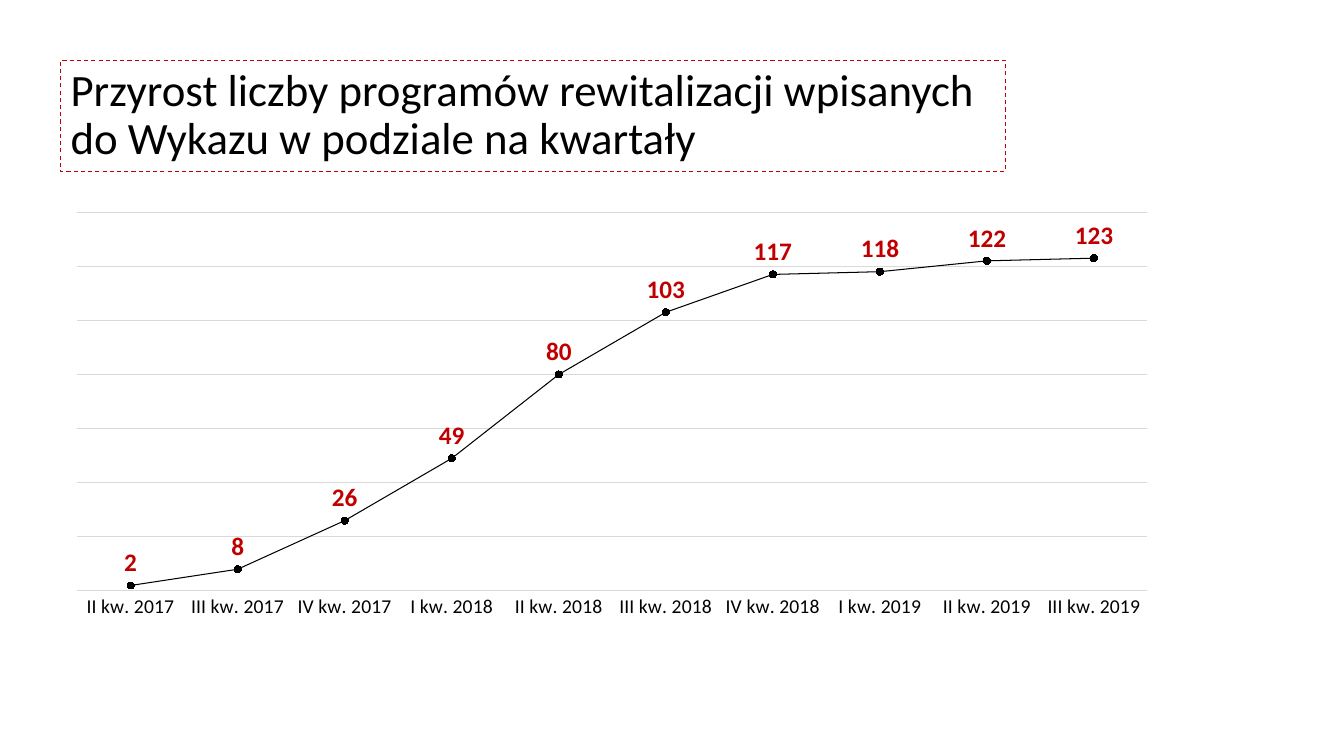
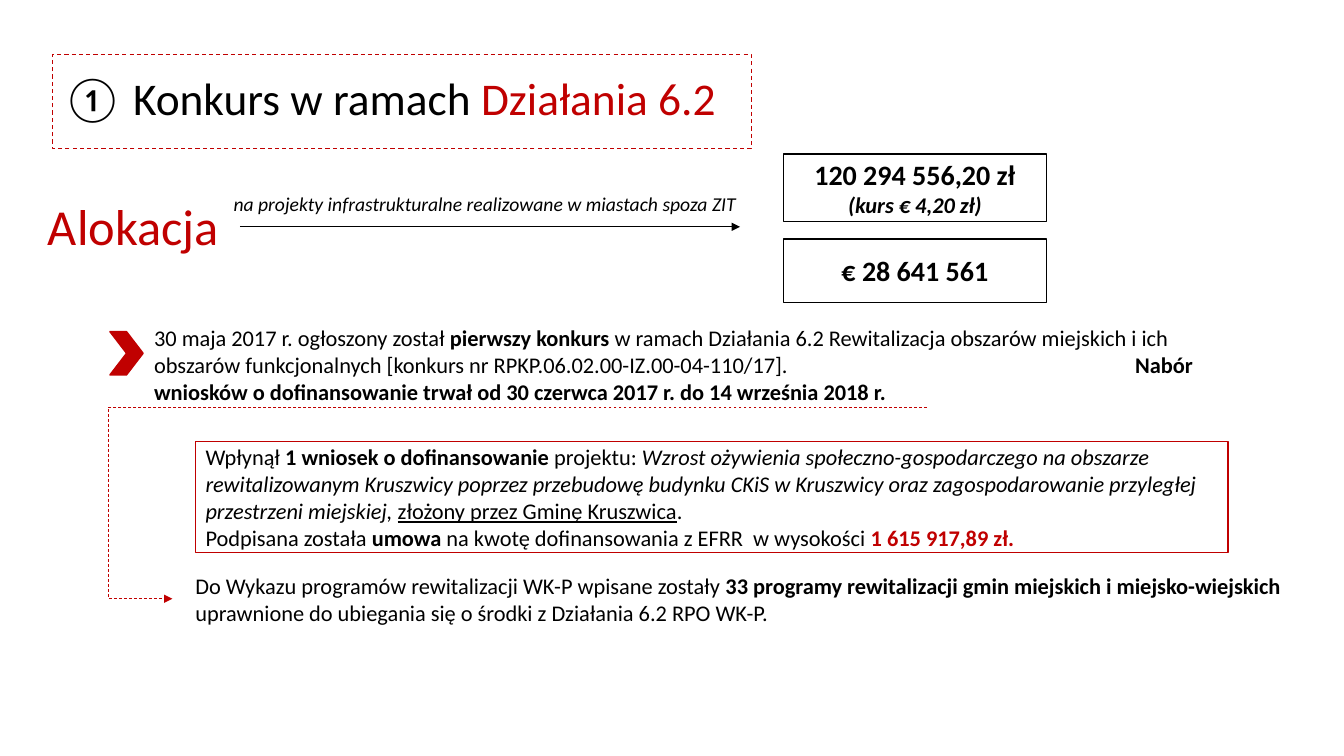
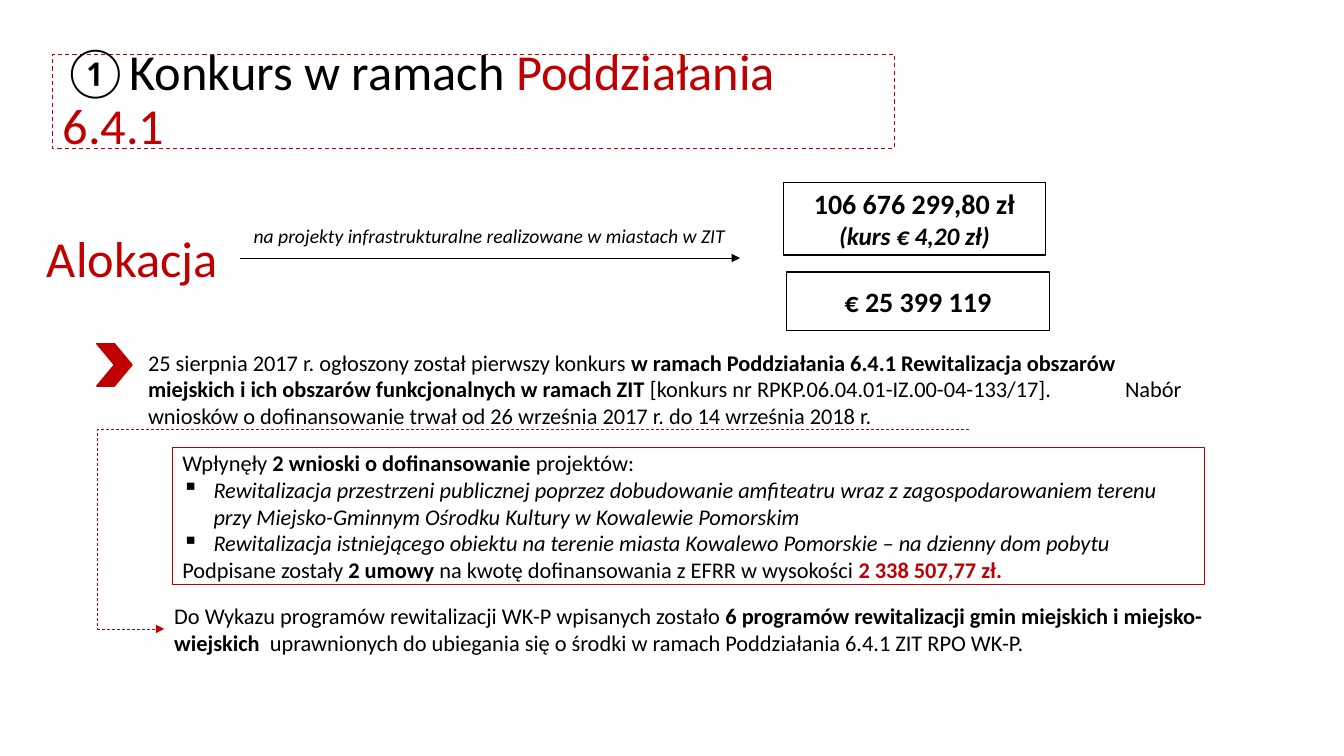
import pptx
import pptx.chart.data
import pptx.dml.color
import pptx.enum.chart
import pptx.enum.dml
import pptx.enum.shapes
import pptx.enum.text
import pptx.oxml
import pptx.oxml.ns
import pptx.util
from lxml import etree

PX = 9144
FONT = "Calibri"
COLORS = {
    name: pptx.dml.color.RGBColor.from_string(code)
    for name, code in {"black": "000000", "red": "C00000", "white": "FFFFFF", "grid": "D9D9D9"}.items()
}
ALIGN = pptx.enum.text.PP_ALIGN
SHAPE = pptx.enum.shapes.MSO_SHAPE
CONNECTOR = pptx.enum.shapes.MSO_CONNECTOR
qn = pptx.oxml.ns.qn


def fill_text(box, paragraphs, size, align=ALIGN.LEFT, anchor=pptx.enum.text.MSO_ANCHOR.MIDDLE):
    frame = box.text_frame
    frame.word_wrap = True
    frame.auto_size = pptx.enum.text.MSO_AUTO_SIZE.NONE
    frame.vertical_anchor = anchor
    for index, runs in enumerate(paragraphs):
        para = frame.paragraphs[0] if index == 0 else frame.add_paragraph()
        para.alignment = align
        for text, style, *own_size in runs:
            span = para.add_run()
            span.text = text
            span.font.name = FONT
            span.font.size = pptx.util.Pt(own_size[0] if own_size else size)
            span.font.bold = "b" in style
            span.font.italic = "i" in style
            span.font.underline = "u" in style
            span.font.color.rgb = COLORS["red" if "r" in style else "black"]


def add_box(page, bounds, kind=SHAPE.RECTANGLE, fill=None, line=None):
    box = page.shapes.add_shape(kind, *[value * PX for value in bounds])
    box.shadow.inherit = False
    if fill:
        box.fill.solid()
        box.fill.fore_color.rgb = COLORS[fill]
    else:
        box.fill.background()
    if line:
        box.line.color.rgb = COLORS[line]
        box.line.width = pptx.util.Pt(1)
    else:
        box.line.fill.background()
    return box


contests = [
    {
        "title": [("① Konkurs w ramach ", ""), ("Działania 6.2", "r")],
        "title_width": 693, "title_size": 32.4,
        "notice": [
            ("30 maja 2017 r. ogłoszony został ", ""),
            ("pierwszy konkurs ", "b"),
            ("w ramach Działania 6.2 Rewitalizacja obszarów miejskich i ich obszarów funkcjonalnych "
             "[konkurs nr RPKP.06.02.00-IZ.00-04-110/17].\t", ""),
            ("Nabór wniosków o dofinansowanie trwał od 30 czerwca 2017 r. do 14 września 2018 r.", "b"),
        ],
        "notice_at": (143, 317, 1052, 87), "notice_tab": 973,
        "result": [
            [("Wpłynął ", ""), ("1 wniosek o dofinansowanie", "b"), (" projektu: ", ""),
             ("Wzrost ożywienia społeczno-gospodarczego na obszarze rewitalizowanym Kruszwicy poprzez "
              "przebudowę budynku CKiS w Kruszwicy oraz zagospodarowanie przyległej przestrzeni miejskiej, ", "i"),
             ("złożony przez Gminę Kruszwica", "u"), (".", "")],
            [("Podpisana została ", ""), ("umowa ", "b"),
             ("na kwotę dofinansowania z EFRR  w wysokości ", ""), ("1 615 917,89 zł.", "br")],
        ],
        "result_at": (194, 438, 1024, 110), "bulleted": [],
        "chevron_at": (109, 329, 33, 43),
        "allocation_at": (13, 183, 250, 81),
        "zloty": [[("120 294 556,20 zł", "b")], [("(kurs € 4,20 zł)", "bi", 16)]],
        "zloty_at": (777, 153, 261, 67),
        "euro": "€ 28 641 561", "euro_at": (777, 237, 261, 63),
        "arrow_y": 225,
        "purpose": "na projekty infrastrukturalne realizowane w miastach spoza ZIT",
        "purpose_at": (220, 183, 522, 38),
        "programs": [
            ("Do Wykazu programów rewitalizacji WK-P wpisane zostały ", ""),
            ("33 programy rewitalizacji gmin miejskich i miejsko-wiejskich ", "b"),
            ("uprawnione do ubiegania się o środki z Działania 6.2 RPO WK-P.", ""),
        ],
        "programs_at": (184, 559, 1100, 71),
        "elbow": (919, 404, 171, 594), "elbow_bend": 108500,
    },
    {
        "title": [("①Konkurs w ramach ", ""), ("Poddziałania 6.4.1", "r")],
        "title_width": 835, "title_size": 36,
        "notice": [
            ("25 sierpnia 2017 r. ogłoszony został pierwszy konkurs ", ""),
            ("w ramach Poddziałania 6.4.1 Rewitalizacja obszarów miejskich i ich obszarów "
             "funkcjonalnych w ramach ZIT ", "b"),
            ("[konkurs nr RPKP.06.04.01-IZ.00-04-133/17].\tNabór wniosków o dofinansowanie trwał "
             "od 26 września 2017 r. do 14 września 2018 r.", ""),
        ],
        "notice_at": (137, 341, 1047, 87), "notice_tab": 969,
        "result": [
            [("Wpłynęły ", ""), ("2 wnioski o dofinansowanie", "b"), (" projektów:", "")],
            [("Rewitalizacja przestrzeni publicznej poprzez dobudowanie amfiteatru wraz z zagospodarowaniem "
              "terenu przy Miejsko-Gminnym Ośrodku Kultury w Kowalewie Pomorskim", "i")],
            [("Rewitalizacja istniejącego obiektu na terenie miasta Kowalewo Pomorskie "
              "– na dzienny dom pobytu", "i")],
            [("Podpisane zostały ", ""), ("2 umowy ", "b"),
             ("na kwotę dofinansowania z EFRR w wysokości ", ""), ("2 338 507,77 zł.", "br")],
        ],
        "result_at": (171, 444, 1024, 136), "bulleted": [1, 2],
        "chevron_at": (96, 341, 35, 42),
        "allocation_at": (12, 215, 250, 81),
        "zloty": [[("106 676 299,80 zł", "b")], [("(kurs € 4,20 zł)", "bi", 18)]],
        "zloty_at": (777, 181, 260, 72),
        "euro": "€ 25 399 119", "euro_at": (780, 270, 261, 58),
        "arrow_y": 256,
        "purpose": "na projekty infrastrukturalne realizowane w miastach w ZIT",
        "purpose_at": (231, 215, 509, 38),
        "programs": [
            ("Do Wykazu programów rewitalizacji WK-P wpisanych zostało ", ""),
            ("6 programów rewitalizacji gmin miejskich i miejsko-wiejskich  ", "b"),
            ("uprawnionych do ubiegania się o środki w ramach Poddziałania 6.4.1 ZIT RPO WK-P.", ""),
        ],
        "programs_at": (163, 596, 1097, 56),
        "elbow": (961, 426, 163, 624), "elbow_bend": 108300,
    },
]

deck = pptx.Presentation()
deck.slide_width = 1333 * PX
deck.slide_height = 750 * PX

titles = [([("Przyrost liczby programów rewitalizacji wpisanych do Wykazu w podziale na kwartały", "")],
           32, (60, 60, 937, 110))]
for contest in contests:
    titles.append((contest["title"], contest["title_size"], (52, 54, contest["title_width"], 93)))

pages = []
for runs, size, bounds in titles:
    page = deck.slides.add_slide(deck.slide_layouts[5])
    title = page.shapes.title
    title.left, title.top, title.width, title.height = [value * PX for value in bounds]
    title.line.color.rgb = COLORS["red"]
    title.line.width = pptx.util.Pt(0.75)
    title.line.dash_style = pptx.enum.dml.MSO_LINE.DASH
    fill_text(title, [runs], size)
    title.text_frame.paragraphs[0].line_spacing = 0.9
    pages.append(page)

growth = pptx.chart.data.CategoryChartData()
growth.categories = [
    "II kw. 2017", "III kw. 2017", "IV kw. 2017", "I kw. 2018", "II kw. 2018",
    "III kw. 2018", "IV kw. 2018", "I kw. 2019", "II kw. 2019", "III kw. 2019",
]
growth.add_series("Series 1", [2, 8, 26, 49, 80, 103, 117, 118, 122, 123])
chart = pages[0].shapes.add_chart(
    pptx.enum.chart.XL_CHART_TYPE.LINE_MARKERS, 76 * PX, 210 * PX, 1095 * PX, 409 * PX, growth
).chart
chart.has_legend = False
chart.has_title = False
chart.font.name = FONT
chart.font.size = pptx.util.Pt(10)
chart.font.color.rgb = COLORS["black"]

quarters = chart.category_axis
quarters.major_tick_mark = pptx.enum.chart.XL_TICK_MARK.NONE
quarters.tick_labels.font.name = FONT
quarters.tick_labels.font.size = pptx.util.Pt(14)
quarters.tick_labels.font.color.rgb = COLORS["black"]
counts = chart.value_axis
counts.minimum_scale = 0
counts.maximum_scale = 140
counts.major_unit = 20
counts.visible = False
counts.has_major_gridlines = True
for line in (quarters.format.line, counts.major_gridlines.format.line):
    line.color.rgb = COLORS["grid"]
    line.width = pptx.util.Pt(0.75)

plot = chart.plots[0]
plot.vary_by_categories = False
series = plot.series[0]
series.smooth = False
series.format.line.color.rgb = COLORS["black"]
series.format.line.width = pptx.util.Pt(0.75)
series.marker.style = pptx.enum.chart.XL_MARKER_STYLE.CIRCLE
series.marker.size = 5
series.marker.format.fill.solid()
series.marker.format.fill.fore_color.rgb = COLORS["black"]
series.marker.format.line.color.rgb = COLORS["black"]
labels = series.data_labels
labels.show_value = True
labels.position = pptx.enum.chart.XL_LABEL_POSITION.ABOVE
labels.font.name = FONT
labels.font.size = pptx.util.Pt(18)
labels.font.bold = True
labels.font.color.rgb = COLORS["red"]

plot_area = chart.element.find(".//" + qn("c:plotArea"))
for old_layout in plot_area.findall(qn("c:layout")):
    plot_area.remove(old_layout)
layout = etree.Element(qn("c:layout"))
manual = etree.SubElement(layout, qn("c:manualLayout"))
for tag, value in [("layoutTarget", "inner"), ("xMode", "edge"), ("yMode", "edge"),
                   ("x", "0"), ("y", "0"), ("w", "0.97"), ("h", "0.92")]:
    etree.SubElement(manual, qn("c:" + tag), val=value)
plot_area.insert(0, layout)

for page, contest in zip(pages[1:], contests):
    left, top, width, height = contest["notice_at"]
    notice = page.shapes.add_textbox(left * PX, top * PX, width * PX, height * PX)
    fill_text(notice, [contest["notice"]], 16, anchor=pptx.enum.text.MSO_ANCHOR.TOP)
    properties = notice.text_frame.paragraphs[0]._p.get_or_add_pPr()
    tabs = etree.SubElement(properties, qn("a:tabLst"))
    etree.SubElement(tabs, qn("a:tab"), pos=str(contest["notice_tab"] * PX), algn="l")

    result = add_box(page, contest["result_at"], line="red")
    fill_text(result, contest["result"], 16)
    for index in contest["bulleted"]:
        properties = result.text_frame.paragraphs[index]._p.get_or_add_pPr()
        properties.set("marL", str(31 * PX))
        properties.set("indent", str(-31 * PX))
        etree.SubElement(properties, qn("a:buChar"), char="▪")

    add_box(page, contest["chevron_at"], SHAPE.CHEVRON, "red", "red")
    allocation = add_box(page, contest["allocation_at"], fill="white")
    fill_text(allocation, [[("Alokacja ", "r")]], 36, ALIGN.CENTER)
    zloty = add_box(page, contest["zloty_at"], fill="white", line="black")
    fill_text(zloty, contest["zloty"], 20, ALIGN.CENTER)
    euro = add_box(page, contest["euro_at"], fill="white", line="black")
    fill_text(euro, [[(contest["euro"], "b")]], 20, ALIGN.CENTER)
    purpose = add_box(page, contest["purpose_at"], fill="white")
    fill_text(purpose, [[(contest["purpose"], "i")]], 14, ALIGN.CENTER)
    programs = add_box(page, contest["programs_at"], fill="white")
    fill_text(programs, [contest["programs"]], 16)

    arrow_ends = (238, contest["arrow_y"], 734, contest["arrow_y"])
    for kind, ends, color in [(CONNECTOR.STRAIGHT, arrow_ends, "black"),
                              (CONNECTOR.ELBOW, contest["elbow"], "red")]:
        arrow = page.shapes.add_connector(kind, *[value * PX for value in ends])
        arrow.line.color.rgb = COLORS[color]
        arrow.line.width = pptx.util.Pt(0.5)
        if kind == CONNECTOR.ELBOW:
            arrow.line.dash_style = pptx.enum.dml.MSO_LINE.DASH
            guides = arrow._element.spPr.find(".//" + qn("a:avLst"))
            etree.SubElement(guides, qn("a:gd"), name="adj1", fmla=f"val {contest['elbow_bend']}")
        etree.SubElement(arrow.line._get_or_add_ln(), qn("a:tailEnd"), type="triangle")
        etree.SubElement(arrow._element.spPr, qn("a:effectLst"))

deck.save("out.pptx")
